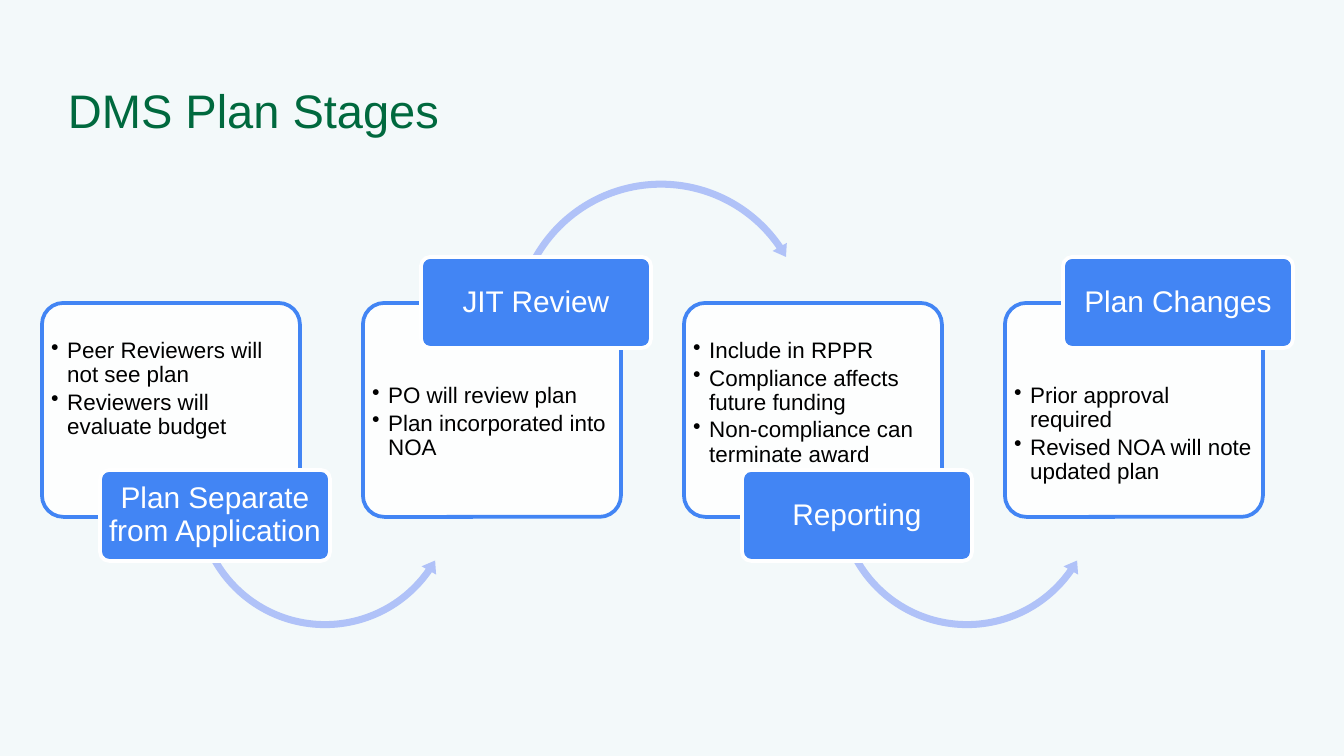
from dataclasses import dataclass

from lxml.etree import SubElement
from pptx import Presentation
from pptx.dml.color import RGBColor as RGB
from pptx.enum.shapes import MSO_SHAPE as SHAPE
from pptx.enum.text import MSO_ANCHOR as ANCHOR, MSO_AUTO_SIZE as FIT, PP_ALIGN as ALIGN
from pptx.oxml.ns import qn
from pptx.util import Pt

PX = 9144000 / 1344


@dataclass(frozen=True)
class Theme:
    font: str = "Arial"
    back: str = "F3F9FA"
    title: str = "00693E"
    accent: str = "4285F4"
    arrow: str = "B0C2F8"
    white: str = "FFFFFF"
    black: str = "000000"
    title_size: float = 25.2
    label_size: float = 16
    body_size: float = 12


THEME = Theme()
STAGES = [
    ("Plan Separate from Application",
     ["Peer Reviewers will not see plan", "Reviewers will evaluate budget"]),
    ("JIT Review", ["PO will review plan", "Plan incorporated into NOA"]),
    ("Reporting",
     ["Include in RPPR", "Compliance affects future funding",
      "Non-compliance can terminate award"]),
    ("Plan Changes", ["Prior approval required", "Revised NOA will note updated plan"]),
]


def px(n):
    """Turn px into EMU."""
    return round(n * PX)


def add_box(slide, kind, box, fill, line=None, adjustments=()):
    """Add a flat preset shape with the given fill and outline."""
    sp = slide.shapes.add_shape(kind, *map(px, box))
    sp.shadow.inherit = False
    sp.fill.solid()
    sp.fill.fore_color.rgb = RGB.from_string(fill)
    if line:
        sp.line.color.rgb = RGB.from_string(line)
        sp.line.width = Pt(2)
    else:
        sp.line.fill.background()
    for i, value in enumerate(adjustments):
        sp.adjustments[i] = value
    return sp


def set_text(sp, lines, size, color, align, anchor, insets):
    """Fill a shape with formatted paragraphs and return its text frame."""
    tf = sp.text_frame
    tf.text = "\n".join(lines)
    tf.word_wrap = True
    tf.auto_size = FIT.NONE
    tf.vertical_anchor = anchor
    tf.margin_left, tf.margin_top, tf.margin_right, tf.margin_bottom = map(px, insets)
    for p in tf.paragraphs:
        p.alignment = align
        for r in p.runs:
            r.font.name = THEME.font
            r.font.size = Pt(size)
            r.font.color.rgb = RGB.from_string(color)
    return tf


def add_bullet(p, indent):
    """Give a paragraph a round bullet with a hanging indent."""
    pPr = p._p.get_or_add_pPr()
    pPr.set("marL", str(px(indent)))
    pPr.set("indent", str(-px(indent)))
    SubElement(pPr, qn("a:buChar"), char="•")


def add_title(slide, box):
    """Place and format the slide title."""
    sp = slide.shapes.title
    sp.left, sp.top, sp.width, sp.height = map(px, box)
    set_text(sp, ["DMS Plan Stages"], THEME.title_size, THEME.title,
             ALIGN.LEFT, ANCHOR.BOTTOM, (13, 13, 13, 13))


def add_card(slide, box, points, text_top):
    """Draw the translucent card with its bullet points."""
    sp = add_box(slide, SHAPE.ROUNDED_RECTANGLE, box, THEME.white, THEME.accent, [0.1])
    color = sp.fill._xPr.find(qn("a:solidFill"))[0]
    SubElement(color, qn("a:alpha"), val="90000")
    tf = set_text(sp, points, THEME.body_size, THEME.black,
                  ALIGN.LEFT, ANCHOR.TOP, (3, text_top, 3, 4))
    for p in tf.paragraphs:
        p.line_spacing = 0.9
        p.space_after = Pt(1.8)
        add_bullet(p, 16)


def add_arrow(slide, x, y, over):
    """Draw the curved arrow to the next stage, above or below the cards."""
    if over:
        add_box(slide, SHAPE.CIRCULAR_ARROW, (x + 146, y - 127, 304, 304), THEME.arrow,
                adjustments=(0.023, 2.832, 195.413, 125.755, 0.027))
    else:
        add_box(slide, SHAPE.LEFT_CIRCULAR_ARROW, (x + 148, y + 60, 270, 270), THEME.arrow,
                adjustments=(0.026, 3.199, 20.954, 90.245, 0.031))


def add_label(slide, box, name):
    """Draw the stage name in a filled box."""
    sp = add_box(slide, SHAPE.ROUNDED_RECTANGLE, box, THEME.accent, THEME.white, [0.1])
    tf = set_text(sp, [name], THEME.label_size, THEME.white,
                  ALIGN.CENTER, ANCHOR.MIDDLE, (4, 3, 4, 3))
    tf.paragraphs[0].line_spacing = 0.9


def add_stage(slide, box, name, points, over, last):
    """Draw one stage: card, arrow to the next one, and label."""
    x, y, w, h = box
    add_card(slide, box, points, 75 if over else 30)
    if not last:
        add_arrow(slide, x, y, over)
    add_label(slide, (x + 58, y - 46 if over else y + h - 47, 230, 91), name)


def add_process(slide, box, pitch):
    """Lay the stages out in a row, with labels alternating below and above."""
    x, y, w, h = box
    for i, (name, points) in enumerate(STAGES):
        add_stage(slide, (x + i * pitch, y, w, h), name, points,
                  over=i % 2 == 1, last=i == len(STAGES) - 1)


def main():
    """Build and save the presentation."""
    prs = Presentation()
    prs.slide_width, prs.slide_height = px(1344), px(756)
    slide = prs.slides.add_slide(prs.slide_layouts[5])
    slide.background.fill.solid()
    slide.background.fill.fore_color.rgb = RGB.from_string(THEME.back)
    add_title(slide, (55, 66, 1253, 85))
    add_process(slide, (42, 303, 258, 214), 321)
    prs.save("out.pptx")


if __name__ == "__main__":
    main()
